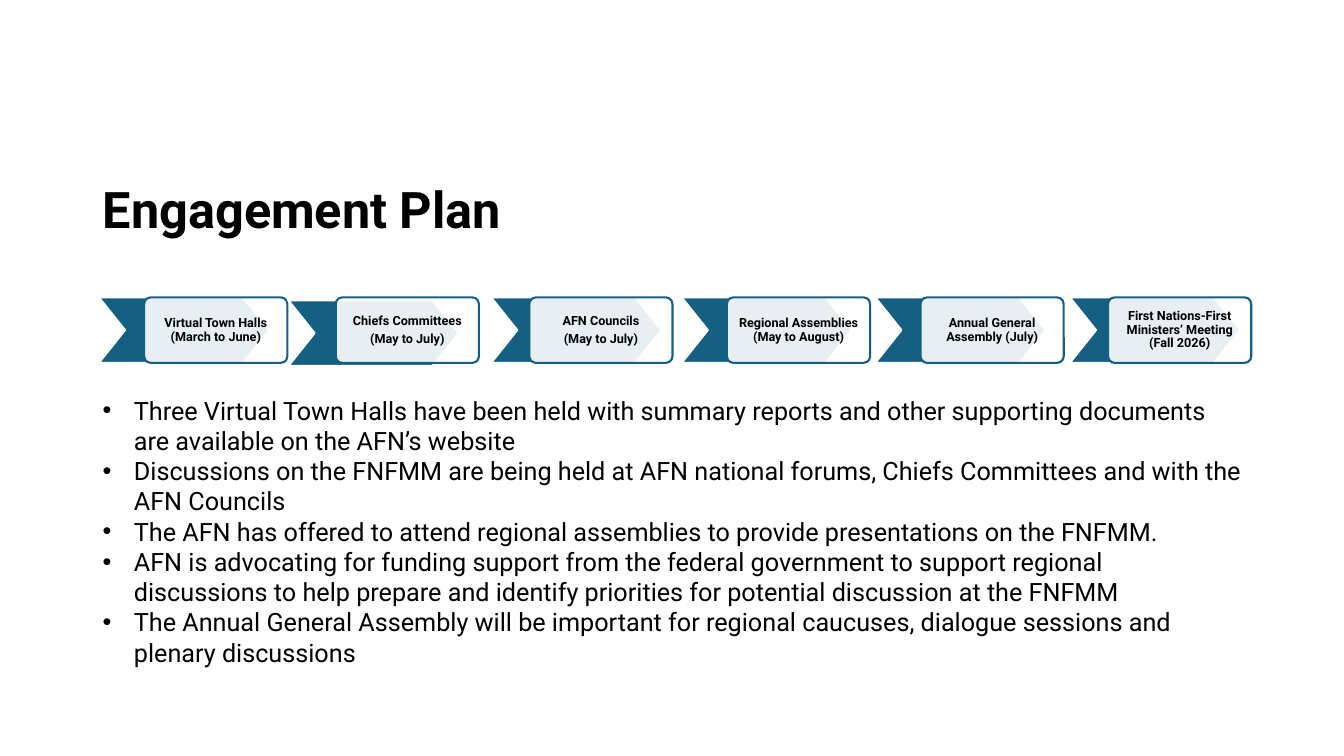
from lxml.etree import SubElement
from pptx import Presentation
from pptx.dml.color import RGBColor
from pptx.enum.shapes import MSO_SHAPE
from pptx.enum.text import MSO_ANCHOR, MSO_AUTO_SIZE, PP_ALIGN
from pptx.oxml.ns import qn
from pptx.util import Pt

PX = 9144
COLORS = {"text": "000000", "paper": "FFFFFF", "accent": "156082"}
FONT = "Roboto"

TITLE = "Engagement Plan"
STAGES = [
    (143, 45, 0, ["Virtual Town Halls (March to June)"]),
    (333, 47, 3, ["Chiefs Committees", "(May to July)"]),
    (525, 38, 0, ["AFN Councils", "(May to July)"]),
    (721, 45, 0, ["Regional Assemblies (May to August)"]),
    (913, 45, 0, ["Annual General Assembly (July)"]),
    (1099, 38, 0, ["First Nations-First Ministers’ Meeting (Fall 2026)"]),
]
POINTS = [
    "Three Virtual Town Halls have been held with summary reports and other "
    "supporting documents are available on the AFN’s website",
    "Discussions on the FNFMM are being held at AFN national forums, Chiefs "
    "Committees and with the AFN Councils",
    "The AFN has offered to attend regional assemblies to provide presentations "
    "on the FNFMM.",
    "AFN is advocating for funding support from the federal government to support "
    "regional discussions to help prepare and identify priorities for potential "
    "discussion at the FNFMM",
    "The Annual General Assembly will be important for regional caucuses, dialogue "
    "sessions and plenary discussions",
]


def color(name):
    """Return the named colour."""
    return RGBColor.from_string(COLORS[name])


def scaled(*lengths):
    """Turn lengths in px into EMU."""
    return [length * PX for length in lengths]


def apply(target, formats):
    """Set every attribute named in a dict of format values."""
    for name, value in formats.items():
        setattr(target, name, value)


def add_bullet(paragraph, indent):
    """Give a paragraph a round bullet with a hanging indent."""
    properties = paragraph._p.get_or_add_pPr()
    properties.set("marL", str(indent * PX))
    properties.set("indent", str(-indent * PX))
    SubElement(properties, qn("a:buFont"), typeface="Arial")
    SubElement(properties, qn("a:buChar"), char="•")


def write(frame, lines, size, bold=False, bullet_indent=0, **formats):
    """Fill a text frame with one formatted paragraph per line."""
    frame.word_wrap = True
    for index, line in enumerate(lines):
        paragraph = frame.add_paragraph() if index else frame.paragraphs[0]
        if bullet_indent:
            add_bullet(paragraph, bullet_indent)
        paragraph.text = line
        apply(paragraph, formats)
        font = paragraph.runs[0].font
        apply(font, {"name": FONT, "size": Pt(size), "bold": bold})
        font.color.rgb = color("text")


def add_panel(shapes, kind, box, adjustment, fill, line):
    """Add a filled and outlined preset shape."""
    shape = shapes.add_shape(kind, *scaled(*box))
    shape.adjustments[0] = adjustment
    shape.shadow.inherit = False
    shape.fill.solid()
    shape.fill.fore_color.rgb = color(fill)
    shape.line.color.rgb = color(line)
    shape.line.width = Pt(1.5)
    return shape


def add_title(slide, box):
    """Place and format the title placeholder."""
    title = slide.shapes.title
    apply(title, dict(zip(("left", "top", "width", "height"), scaled(*box))))
    title.text_frame.vertical_anchor = MSO_ANCHOR.MIDDLE
    write(title.text_frame, [TITLE], 36, bold=True,
          alignment=PP_ALIGN.LEFT, line_spacing=0.9)


def add_stage(shapes, box, lead, drop, lines):
    """Add a stage card with the chevron that leads into it."""
    left, top, width, height = box
    add_panel(shapes, MSO_SHAPE.CHEVRON, (left - lead, top + drop, 169, height),
              0.4, "accent", "paper")
    card = add_panel(shapes, MSO_SHAPE.ROUNDED_RECTANGLE, box, 0.1, "paper", "accent")
    fill_color = card.fill._xPr.find(qn("a:solidFill"))[0]
    SubElement(fill_color, qn("a:alpha"), val="90000")
    frame = card.text_frame
    sides = ("margin_left", "margin_top", "margin_right", "margin_bottom")
    apply(frame, dict.fromkeys(sides, 7 * PX))
    frame.vertical_anchor = MSO_ANCHOR.MIDDLE
    write(frame, lines, 9, bold=True, alignment=PP_ALIGN.CENTER,
          line_spacing=0.9, space_after=Pt(3.15))


def add_timeline(slide, top, width, height):
    """Add the row of engagement stages as one group."""
    group = slide.shapes.add_group_shape()
    for left, lead, drop, lines in STAGES:
        add_stage(group.shapes, (left, top, width, height), lead, drop, lines)


def add_points(slide, box):
    """Add the bulleted list."""
    frame = slide.shapes.add_textbox(*scaled(*box)).text_frame
    frame.auto_size = MSO_AUTO_SIZE.SHAPE_TO_FIT_TEXT
    write(frame, POINTS, 18, bullet_indent=31)


def main():
    """Build and save the presentation."""
    presentation = Presentation()
    apply(presentation, {"slide_width": 1333 * PX, "slide_height": 750 * PX})
    slide = presentation.slides.add_slide(presentation.slide_layouts[5])
    add_title(slide, (92, 166, 1150, 90))
    add_timeline(slide, 295, 142, 65)
    add_points(slide, (92, 387, 1150, 313))
    presentation.save("out.pptx")


if __name__ == "__main__":
    main()
